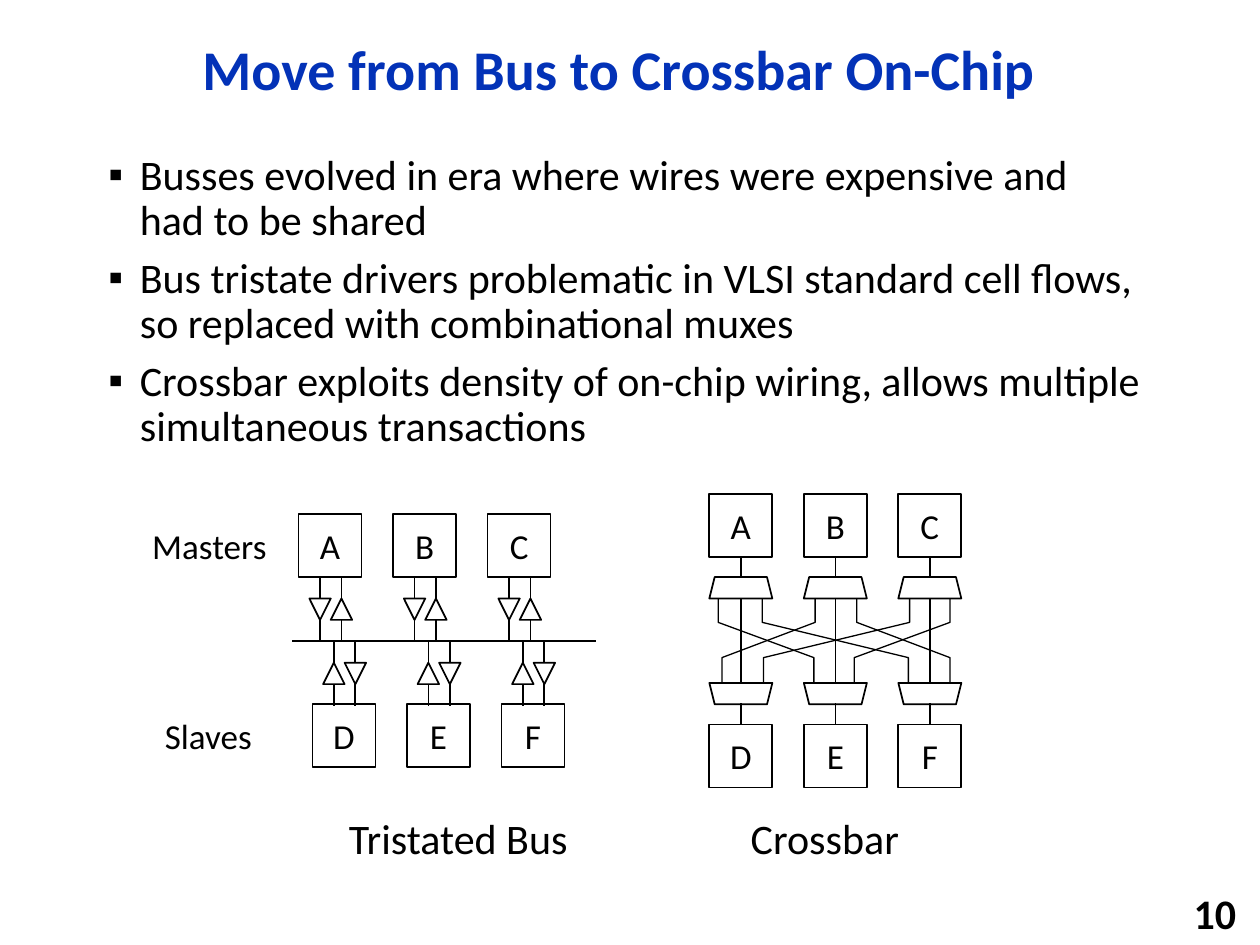
from lxml.etree import SubElement as Sub
from pptx import Presentation
from pptx.dml.color import RGBColor
from pptx.enum.shapes import MSO_CONNECTOR as Conn, MSO_SHAPE as Geo
from pptx.enum.text import MSO_ANCHOR as Anchor, MSO_AUTO_SIZE as Auto, PP_ALIGN as Align
from pptx.oxml.ns import qn
from pptx.util import Inches as In, Pt

tint = RGBColor.from_string
black, white, blue = "000000", "FFFFFF", "0332B7"
face = {"name": "Calibri", "size": Pt(20), "bold": False}
big = {**face, "size": Pt(24)}

deck = Presentation()
deck.slide_width, deck.slide_height = In(10), In(7.5)
slide = deck.slides.add_slide(deck.slide_layouts[1])
shapes = slide.shapes


def put(geo, x, y, w, h, text="", turn=0):
    item = shapes.add_shape(geo, In(x), In(y), In(w), In(h))
    item.shadow.inherit = False
    item.rotation = turn
    item.fill.solid()
    item.fill.fore_color.rgb = tint(white)
    item.line.color.rgb = tint(black)
    item.line.width = Pt(1)
    if text:
        frame = item.text_frame
        form = {"margin_left": 0, "margin_right": 0, "margin_top": 0,
                "margin_bottom": 0, "vertical_anchor": Anchor.MIDDLE}
        for key, val in form.items():
            setattr(frame, key, val)
        para = frame.paragraphs[0]
        para.text, para.alignment = text, Align.CENTER
        for key, val in face.items():
            setattr(para.font, key, val)
        para.font.color.rgb = tint(black)
    return item


def wire(x, y, end_x, end_y):
    line = shapes.add_connector(Conn.STRAIGHT, In(x), In(y), In(end_x), In(end_y))
    line.line.color.rgb = tint(black)
    line.line.width = Pt(1)
    Sub(line._element.spPr, qn("a:effectLst"))
    return line


title, body = shapes.title, slide.placeholders[1]
title.text_frame.text = "Move from Bus to Crossbar On-Chip"
body.text_frame.text = "\n".join([
    "Busses evolved in era where wires were expensive and had to be shared",
    "Bus tristate drivers problematic in VLSI standard cell flows, so replaced with combinational muxes",
    "Crossbar exploits density of on-chip wiring, allows multiple simultaneous transactions",
])
for para in body.text_frame.paragraphs:
    para.space_before = Pt(7.2)
    props = para._p.get_or_add_pPr()
    props.set("marL", str(In(0.25)))
    props.set("indent", str(-In(0.25)))
    Sub(props, qn("a:buChar")).set("char", "▪")

heads = [
    (title, (0.92, 0.17, 7.98, 0.81), Anchor.MIDDLE, Align.CENTER,
     {**face, "size": Pt(32), "bold": True}, blue),
    (body, (0.76, 1.17, 8.4, 2.83), Anchor.TOP, Align.LEFT, big, black),
]
for item, box, anchor, align, font, hue in heads:
    for key, val in zip(("left", "top", "width", "height"), box):
        setattr(item, key, In(val))
    item.text_frame.auto_size = Auto.NONE
    item.text_frame.vertical_anchor = anchor
    for para in item.text_frame.paragraphs:
        para.alignment, para.line_spacing = align, 0.9
        for key, val in font.items():
            setattr(para.font, key, val)
        para.font.color.rgb = tint(hue)

notes = [
    ("Tristated Bus", (2.67, 6.4, 1.99, 0.5), Align.LEFT, big),
    ("Crossbar", (5.86, 6.4, 1.39, 0.5), Align.LEFT, big),
    ("Masters", (1.11, 4.11, 1.12, 0.44), Align.LEFT, face),
    ("Slaves", (1.21, 5.62, 0.9, 0.44), Align.LEFT, face),
    ("10", (7.83, 7.08, 2.08, 0.32), Align.RIGHT, {**big, "bold": True}),
]
for text, box, align, font in notes:
    frame = shapes.add_textbox(*map(In, box)).text_frame
    frame.word_wrap = align == Align.RIGHT
    frame.vertical_anchor = Anchor.MIDDLE
    para = frame.paragraphs[0]
    para.text, para.alignment = text, align
    for key, val in font.items():
        setattr(para.font, key, val)
    para.font.color.rgb = tint(black)

step, side, thin = 0.75, 0.5, 0.17

wire(2.32, 5.09, 4.73, 5.09)
rows = [("ABC", 2.37, 4.08, 4.75, (180, 0)), ("DEF", 2.48, 5.59, 5.26, (0, 180))]
for names, left, top, gate, turns in rows:
    for col, name in enumerate(names):
        x = left + col * step
        put(Geo.RECTANGLE, x, top, side, side, name)
        for mid, turn in zip((x + thin, x + 2 * thin), turns):
            wire(mid, gate - thin, mid, gate)
            wire(mid, gate + thin, mid, gate + 2 * thin)
            put(Geo.ISOSCELES_TRIANGLE, mid - thin / 2, gate, thin, thin, turn=turn)

for col, (lord, serf) in enumerate(zip("ABC", "DEF")):
    x = 5.63 + col * step
    mid = x + side / 2
    wire(mid, 4.75, mid, 5.42)
    upper = put(Geo.RECTANGLE, x, 3.92, side, side, lord)
    lower = put(Geo.RECTANGLE, x, 5.75, side, side, serf)
    put(Geo.TRAPEZOID, x, 4.58, side, thin)
    put(Geo.TRAPEZOID, x, 5.42, side, thin, turn=180)
    wire(mid, 4.42, mid, 4.58).begin_connect(upper, 2)
    wire(mid, 5.75, mid, 5.58).begin_connect(lower, 0)

links = [(7.54, 6.78), (6.47, 5.73), (6.8, 7.54), (5.7, 6.46), (7.22, 6.06), (6.05, 7.21)]
for start, stop in links:
    path = shapes.build_freeform(In(start), In(4.75))
    path.add_line_segments([(In(start), In(4.94)), (In(stop), In(5.22)),
                            (In(stop), In(5.42))], close=False)
    bend = path.convert_to_shape()
    bend.shadow.inherit = False
    bend.fill.background()
    bend.line.color.rgb = tint(black)
    bend.line.width = Pt(0.75)

deck.save("out.pptx")
